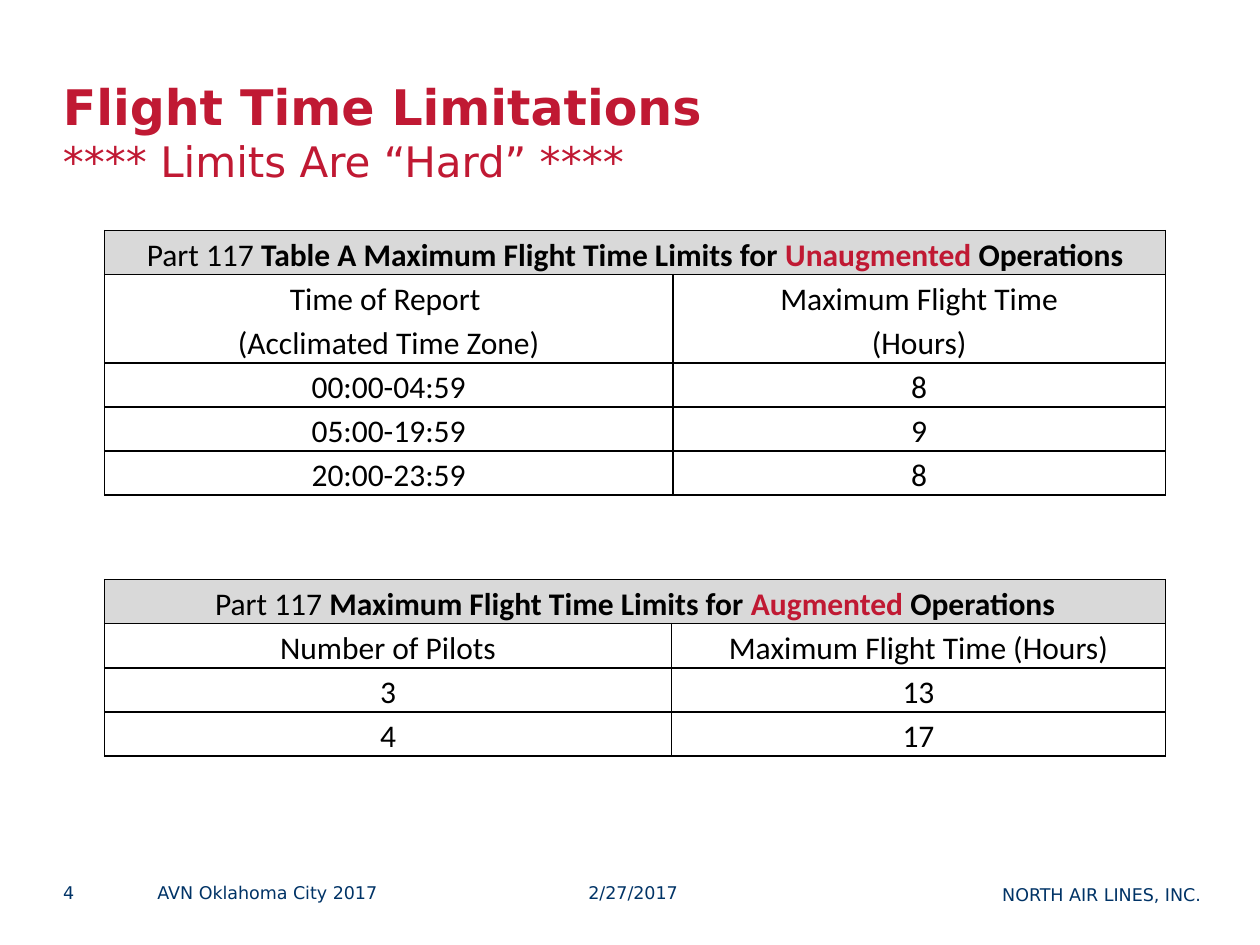
from dataclasses import dataclass

from lxml.etree import SubElement as Sub
from pptx import Presentation
from pptx.dml.color import RGBColor as RGB
from pptx.enum.text import MSO_ANCHOR as Anchor, PP_ALIGN as Align
from pptx.oxml.ns import qn
from pptx.util import Inches, Pt

RED = RGB(0xC0, 0x19, 0x33)
NAVY = RGB(0x00, 0x33, 0x66)
BLACK = RGB(0x00, 0x00, 0x00)
GRAY = RGB(0xD9, 0xD9, 0xD9)

WIDE, HIGH = Inches(10), Inches(7.5)
ROW = Inches(0.35)
SANS, BODY = "DejaVu Sans", "Calibri"


@dataclass
class Run:
    text: str
    bold: bool = True
    color: RGB = BLACK


@dataclass
class Label:
    """A line of text in a box placed by shares of the slide's size."""
    text: str
    left: float
    top: float
    width: float
    align: Align = Align.LEFT


@dataclass
class Grid:
    """A limits table: merged heading, then rows of two cells."""
    top: float
    cols: tuple[float, float]
    head: list[Run]
    rows: list[tuple[str, str]]


LABELS = [
    Label("NORTH AIR LINES, INC.", 0.7, 0.935, 0.253, Align.RIGHT),
    Label("AVN Oklahoma City 2017", 0.125, 0.933, 0.317),
    Label("4", 0.05, 0.933, 0.058),
    Label("2/27/2017", 0.467, 0.933, 0.208),
]

GRIDS = [
    Grid(1.83 / 7.5, (0.451, 0.391),
         [Run("Part 117 ", False),
          Run("Table A Maximum Flight Time Limits for "),
          Run("Unaugmented", color=RED), Run(" Operations")],
         [("Time of Report \n(Acclimated Time Zone)",
           "Maximum Flight Time\n(Hours)"),
          ("00:00-04:59", "8"), ("05:00-19:59", "9"), ("20:00-23:59", "8")]),
    Grid(4.6 / 7.5, (0.45, 0.392),
         [Run("Part 117 ", False), Run("Maximum Flight Time Limits for "),
          Run("Augmented", color=RED), Run(" Operations")],
         [("Number of Pilots", "Maximum Flight Time (Hours)"),
          ("3", "13"), ("4", "17")]),
]


def style(run, name: str, size: int, color: RGB, bold: bool = False) -> None:
    font = run.font
    font.name, font.size, font.bold = name, Pt(size), bold
    font.color.rgb = color


def add_box(slide, left: float, top: float, width: float, high: float):
    box = slide.shapes.add_textbox(int(WIDE * left), int(HIGH * top),
                                   int(WIDE * width), int(HIGH * high))
    frame = box.text_frame
    frame.word_wrap = True
    frame.margin_left = frame.margin_right = 0
    frame.margin_top = frame.margin_bottom = 0
    return frame


def add_title(slide) -> None:
    frame = add_box(slide, 0.05, 0.077, 0.9, 0.123)
    frame.vertical_anchor = Anchor.MIDDLE
    frame.text = "Flight Time Limitations\n**** Limits Are “Hard” ****"
    main, sub = frame.paragraphs
    style(main.runs[0], SANS, 28, RED, True)
    style(sub.runs[0], SANS, 24, RED)


def add_label(slide, label: Label) -> None:
    frame = add_box(slide, label.left, label.top, label.width, 0.044)
    frame.text = label.text
    para = frame.paragraphs[0]
    para.alignment = label.align
    style(para.runs[0], SANS, 10, NAVY)


def add_edges(cell) -> None:
    props = cell._tc.get_or_add_tcPr()
    for spot, side in enumerate(("lnL", "lnR", "lnT", "lnB")):
        line = Sub(props, qn(f"a:{side}"), w=str(Pt(1)))
        Sub(Sub(line, qn("a:solidFill")), qn("a:srgbClr"), val=str(BLACK))
        props.insert(spot, line)  # edges come before the fill


def set_cell(cell) -> None:
    cell.margin_left = cell.margin_right = Inches(0.07)
    cell.margin_top = cell.margin_bottom = 0
    cell.fill.background()
    for para in cell.text_frame.paragraphs:
        para.alignment = Align.CENTER
        para.line_spacing = 1.15
        for run in para.runs:
            style(run, BODY, 18, BLACK)
    add_edges(cell)


def add_grid(slide, grid: Grid) -> None:
    lines = [1] + [row[0].count("\n") + 1 for row in grid.rows]
    table = slide.shapes.add_table(
        len(lines), 2, Inches(0.83), int(HIGH * grid.top),
        int(WIDE * sum(grid.cols)), ROW * sum(lines)).table
    for col, share in zip(table.columns, grid.cols):
        col.width = int(WIDE * share)
    for row, count in zip(table.rows, lines):
        row.height = ROW * count
    for y, row in enumerate(grid.rows, 1):
        for x, text in enumerate(row):
            table.cell(y, x).text_frame.text = text
    for cell in table.iter_cells():
        set_cell(cell)

    # Heading across both columns
    head = table.cell(0, 0)
    head.merge(table.cell(0, 1))
    head.fill.solid()
    head.fill.fore_color.rgb = GRAY
    para = head.text_frame.paragraphs[0]
    for part in grid.head:
        run = para.add_run()
        run.text = part.text
        style(run, BODY, 18, part.color, part.bold)


def main() -> None:
    deck = Presentation()
    deck.slide_width, deck.slide_height = WIDE, HIGH
    slide = deck.slides.add_slide(deck.slide_layouts[6])
    add_title(slide)
    # Footer
    for label in LABELS:
        add_label(slide, label)
    # Limits tables
    for grid in GRIDS:
        add_grid(slide, grid)
    deck.save("out.pptx")


if __name__ == "__main__":
    main()
